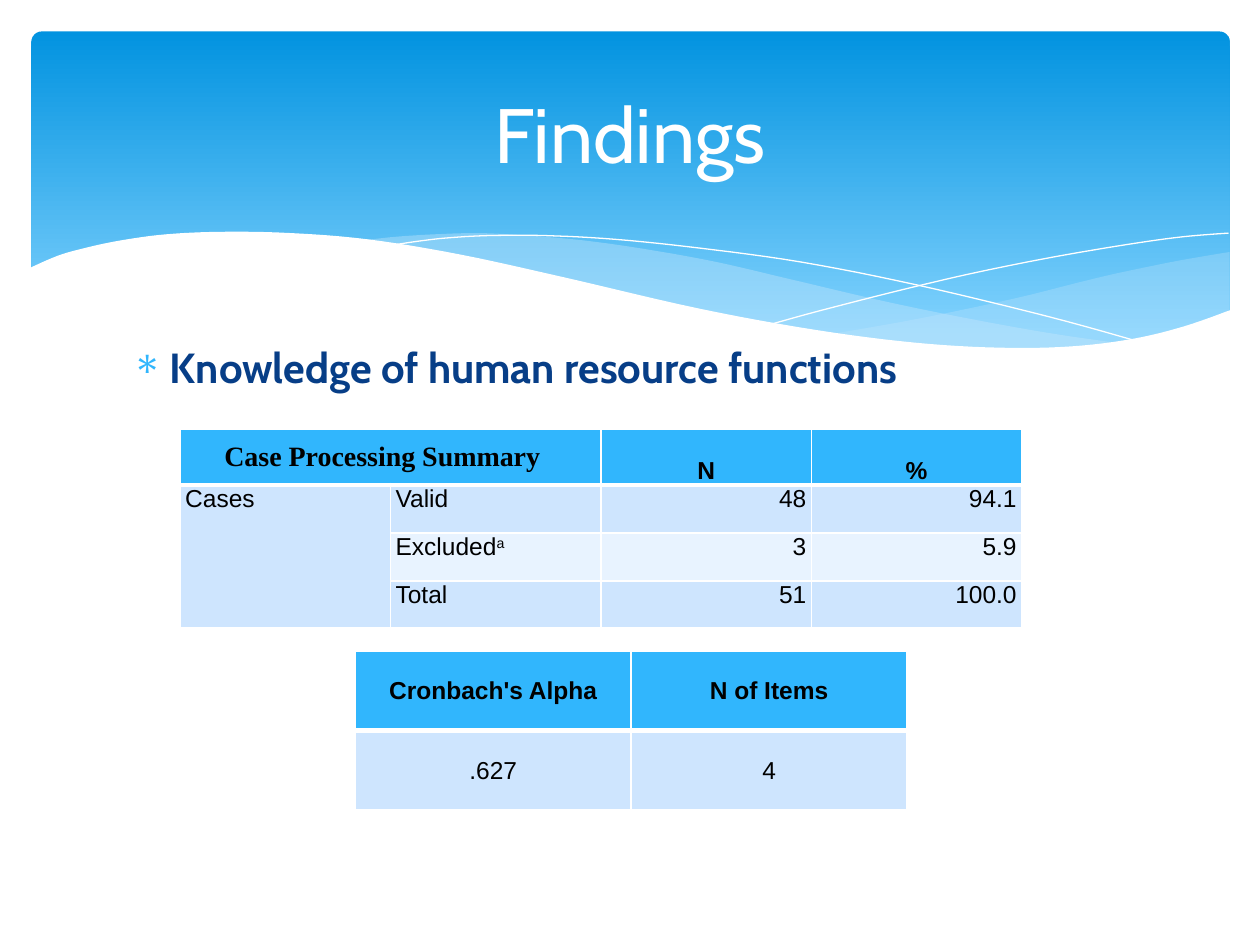
"""Build the Findings slide with its wave banner and two result tables."""
from dataclasses import dataclass

from lxml import etree
from pptx import Presentation
from pptx.dml.color import RGBColor
from pptx.enum.shapes import MSO_SHAPE
from pptx.enum.text import MSO_ANCHOR, PP_ALIGN
from pptx.oxml.ns import qn
from pptx.util import Pt

ROUND = MSO_SHAPE.ROUNDED_RECTANGLE
TOP, MID, LOW = MSO_ANCHOR.TOP, MSO_ANCHOR.MIDDLE, MSO_ANCHOR.BOTTOM
LEFT, MIDST, RIGHT = PP_ALIGN.LEFT, PP_ALIGN.CENTER, PP_ALIGN.RIGHT
SCALE = 9144
STEPS = 6
COLORS = {
    "white": "FFFFFF", "black": "000000", "deep": "0293E0", "sky": "83D3FE",
    "mist": "C6E7FC", "navy": "073E87", "head": "31B6FD", "band": "CEE5FE",
    "pale": "E8F3FF",
}
FONTS = {
    "title": {"name": "Cabin", "size": Pt(44), "bold": False},
    "topic": {"name": "Cabin", "size": Pt(24), "bold": True},
    "label": {"name": "Times New Roman", "size": Pt(16), "bold": True},
    "head": {"name": "Arial", "size": Pt(14), "bold": True},
    "cell": {"name": "Arial", "size": Pt(14), "bold": False},
}


@dataclass
class Wave:
    curves: list
    fill: str = ""
    alpha: int = 100
    corners: tuple = ()


@dataclass
class Entry:
    text: str
    align: int = MIDST
    anchor: int = MID
    font: str = "cell"
    fill: str = "band"
    sup: str = ""
    pad: tuple = (4, 4)


@dataclass
class Grid:
    box: tuple
    cols: list
    rows: list
    cells: dict
    merges: tuple = ()


WAVES = [
    Wave([[(976, 200), (935, 207), (891, 216), (861, 223), (805, 237), (729, 253), (661, 265)],
          [(661, 265), (705, 271), (757, 276), (814, 278), (872, 274), (921, 265),
           (949, 257), (976, 247)]], "mist", 29),
    Wave([[(893, 273), (837, 265), (775, 254), (706, 240), (629, 222), (569, 208), (514, 198),
           (465, 191), (420, 187), (380, 185), (344, 186), (313, 188), (286, 191)],
          [(286, 191), (342, 199), (404, 211), (449, 222), (530, 240), (601, 255), (665, 266),
           (722, 274), (773, 277), (818, 278), (857, 277), (893, 273)]], "mist", 40),
    Wave([[(309, 195), (328, 192), (353, 189), (387, 187), (433, 187), (489, 190), (556, 197),
           (636, 208), (727, 226), (831, 251), (907, 272)]]),
    Wave([[(613, 257), (653, 246), (720, 229), (776, 216), (836, 204), (895, 194),
           (938, 188), (975, 185)]]),
    Wave([[(977, 246), (940, 259), (899, 269), (850, 275), (793, 276), (726, 272), (648, 262),
           (555, 245), (447, 220), (365, 202), (292, 190), (230, 185), (177, 184), (132, 186),
           (95, 191), (67, 197), (46, 203), (23, 213)]], "white", 100, ((23, 329), (977, 329))),
]
DATA = [("Valid", "", "48", "94.1"), ("Excluded", "a", "3", "5.9"), ("Total", "", "51", "100.0")]


def px(num: float) -> int:
    return round(num * SCALE)


def rgb(name: str) -> RGBColor:
    return RGBColor.from_string(COLORS[name])


def style(font, kind: str, color: str) -> None:
    for name, value in FONTS[kind].items():
        setattr(font, name, value)
    font.color.rgb = rgb(color)


def spline(knots: list) -> list:
    ends = [knots[0], *knots, knots[-1]]
    dots = [knots[0]]
    for a, b, c, d in zip(ends, ends[1:], ends[2:], ends[3:]):
        for step in range(1, STEPS + 1):
            t = step / STEPS
            dots.append(tuple(
                (2 * q + (r - p) * t + (2 * p - 5 * q + 4 * r - s) * t ** 2
                 + (3 * q - p - 3 * r + s) * t ** 3) / 2
                for p, q, r, s in zip(a, b, c, d)))
    return dots


def draw_wave(shapes, wave: Wave) -> None:
    dots = [dot for curve in wave.curves for dot in spline(curve)] + list(wave.corners)
    dots = [(px(x), px(y)) for x, y in dots]
    pen = shapes.build_freeform(*dots[0], scale=1.0)
    pen.add_line_segments(dots[1:], close=bool(wave.fill))
    shape = pen.convert_to_shape()
    shape.shadow.inherit = False
    if not wave.fill:
        shape.fill.background()
        shape.line.color.rgb = rgb("white")
        shape.line.width = 0
        return
    shape.line.fill.background()
    shape.fill.solid()
    shape.fill.fore_color.rgb = rgb(wave.fill)
    if wave.alpha < 100:
        tint = shape.element.spPr.find(qn("a:solidFill"))[0]
        etree.SubElement(tint, qn("a:alpha"), val=str(wave.alpha * 1000))


def draw_band(shapes) -> None:
    band = shapes.add_shape(ROUND, *map(px, (25, 25, 951, 270)))
    band.adjustments[0] = 0.03
    band.shadow.inherit = False
    band.line.fill.background()
    band.fill.gradient()
    band.fill.gradient_angle = 270
    for stop, color, place in zip(band.fill.gradient_stops, ("deep", "sky"), (0, 0.9)):
        stop.color.rgb = rgb(color)
        stop.position = place


def edge(cell, widths: dict) -> None:
    props = cell._tc.get_or_add_tcPr()
    for spot, (side, width) in enumerate(widths.items()):
        line = etree.Element(qn(f"a:ln{side}"), w=str(Pt(width)))
        fill = etree.SubElement(line, qn("a:solidFill"))
        etree.SubElement(fill, qn("a:srgbClr"), val=COLORS["white"])
        props.insert(spot, line)


def fill_cell(cell, item: Entry) -> None:
    left, right = map(px, item.pad)
    looks = {"margin_left": left, "margin_right": right, "margin_top": 0,
             "margin_bottom": 0, "vertical_anchor": item.anchor}
    for name, value in looks.items():
        setattr(cell, name, value)
    para = cell.text_frame.paragraphs[0]
    para.alignment = item.align
    if item.font != "label":
        para.line_spacing = Pt(16)
    for text, base in ((item.text, 0), (item.sup, 30000)):
        if text:
            run = para.add_run()
            run.text = text
            style(run.font, item.font, "black")
            if base:
                run._r.get_or_add_rPr().set("baseline", str(base))
    cell.fill.solid()
    cell.fill.fore_color.rgb = rgb(item.fill)


def draw_grid(shapes, grid: Grid) -> None:
    table = shapes.add_table(len(grid.rows), len(grid.cols), *map(px, grid.box)).table
    table.horz_banding = False
    for col, width in zip(table.columns, grid.cols):
        col.width = px(width)
    for row, height in zip(table.rows, grid.rows):
        row.height = px(height)
    for first, last in grid.merges:
        table.cell(*first).merge(table.cell(*last))
    for spot, item in grid.cells.items():
        fill_cell(table.cell(*spot), item)
    for row in range(len(grid.rows)):
        for col in range(len(grid.cols)):
            edge(table.cell(row, col), {"L": 1, "R": 1, "T": 3 if row == 1 else 1,
                                        "B": 3 if row == 0 else 1})


def case_grid() -> Grid:
    cells = {(0, 0): Entry("Case Processing Summary", font="label", fill="head", pad=(0, 13)),
             (1, 0): Entry("Cases", LEFT, TOP)}
    for col, text in ((2, "N"), (3, "%")):
        cells[0, col] = Entry(text, MIDST, LOW, "head", "head")
    for row, (name, sup, *values) in enumerate(DATA, 1):
        fill = "band" if row % 2 else "pale"
        cells[row, 1] = Entry(name, LEFT, TOP, fill=fill, sup=sup)
        for col, text in enumerate(values, 2):
            cells[row, col] = Entry(text, RIGHT, TOP, fill=fill)
    return Grid((143, 341, 668, 157), [167] * 4, [44, 38, 38, 37], cells,
                (((0, 0), (0, 1)), ((1, 0), (3, 0))))


def alpha_grid() -> Grid:
    cells = {}
    for col, (name, value) in enumerate((("Cronbach's Alpha", ".627"), ("N of Items", "4"))):
        cells[0, col] = Entry(name, font="head", fill="head")
        cells[1, col] = Entry(value)
    return Grid((282, 517, 438, 126), [219] * 2, [63] * 2, cells)


def place(shape, box: tuple, text: str, kind: str, color: str):
    for name, value in zip(("left", "top", "width", "height"), box):
        setattr(shape, name, px(value))
    shape.text_frame.word_wrap = True
    para = shape.text_frame.paragraphs[0]
    run = para.add_run()
    run.text = text
    style(run.font, kind, color)
    return para


def main() -> None:
    deck = Presentation()
    deck.slide_width, deck.slide_height = px(1000), px(750)
    slide = deck.slides.add_slide(deck.slide_layouts[5])
    shapes = slide.shapes
    draw_band(shapes)
    for wave in WAVES:
        draw_wave(shapes, wave)
    box = (95, 266, 810, 377)
    topic = place(shapes.add_textbox(*map(px, box)), box,
                  "Knowledge of human resource functions", "topic", "navy")
    topic.space_before = Pt(5)
    props = topic._p.get_or_add_pPr()
    props.set("marL", str(px(30)))
    props.set("indent", str(px(-30)))
    tint = etree.SubElement(props, qn("a:buClr"))
    etree.SubElement(tint, qn("a:srgbClr"), val=COLORS["head"])
    etree.SubElement(props, qn("a:buChar"), char="∗")
    title = shapes.title
    place(title, (50, 37, 900, 137), "Findings", "title", "white").alignment = MIDST
    title.text_frame.vertical_anchor = MID
    shapes.element.append(title.element)
    for grid in (case_grid(), alpha_grid()):
        draw_grid(shapes, grid)
    deck.save("out.pptx")


if __name__ == "__main__":
    main()
